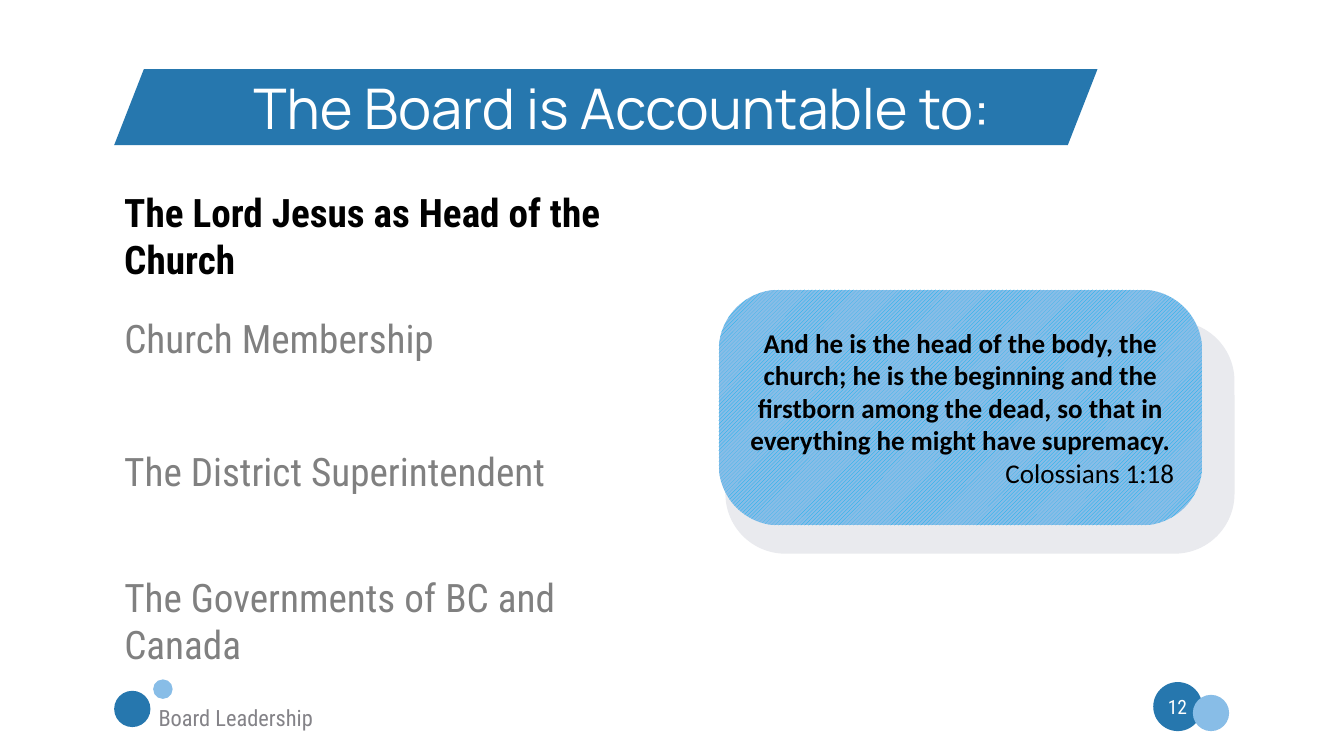
from pptx import Presentation
from pptx.dml.color import RGBColor
from pptx.enum.dml import MSO_PATTERN
from pptx.enum.shapes import MSO_SHAPE
from pptx.enum.text import MSO_ANCHOR, MSO_AUTO_SIZE, PP_ALIGN
from pptx.util import Inches, Pt

BLUE = RGBColor(0x26, 0x77, 0xAE)
LIGHT_BLUE = RGBColor(0x88, 0xBD, 0xE7)
SKY = RGBColor(0x00, 0xB0, 0xF0)
PALE_GRAY = RGBColor(0xE9, 0xEA, 0xEE)
GRAY = RGBColor(0x80, 0x80, 0x80)
FOOTER_GRAY = RGBColor(0x84, 0x83, 0x88)
BLACK = RGBColor(0, 0, 0)
WHITE = RGBColor(0xFF, 0xFF, 0xFF)

BODY_FONT = "Roboto Condensed"
TITLE_FONT = "Manrope"
QUOTE_FONT = "Calibri"


def add_plain_shape(slide, kind, left, top, width, height, color, adjustment=None):
    shape = slide.shapes.add_shape(
        kind, Inches(left), Inches(top), Inches(width), Inches(height))
    shape.shadow.inherit = False
    shape.fill.solid()
    shape.fill.fore_color.rgb = color
    shape.line.fill.background()
    if adjustment is not None:
        shape.adjustments[0] = adjustment
    return shape


def set_frame(frame, anchor=MSO_ANCHOR.TOP):
    frame.word_wrap = True
    frame.auto_size = MSO_AUTO_SIZE.NONE
    frame.vertical_anchor = anchor
    frame.margin_left = frame.margin_right = Inches(0.15)
    frame.margin_top = frame.margin_bottom = Inches(0.08)


def write(paragraph, text, font, size, color, bold=False, align=PP_ALIGN.LEFT):
    paragraph.text = text
    paragraph.alignment = align
    paragraph.font.name = font
    paragraph.font.size = Pt(size)
    paragraph.font.bold = bold
    paragraph.font.color.rgb = color


def add_label(slide, left, top, width, height, text, size, color,
              bold=False, align=PP_ALIGN.LEFT):
    label = slide.shapes.add_textbox(
        Inches(left), Inches(top), Inches(width), Inches(height))
    set_frame(label.text_frame)
    write(label.text_frame.paragraphs[0], text, BODY_FONT, size, color, bold, align)


def add_title(slide, left, top, width, height):
    banner = add_plain_shape(slide, MSO_SHAPE.PARALLELOGRAM,
                             left, top, width, height, BLUE, 0.391)
    title = slide.shapes.title
    banner.element.addnext(title.element)  # title sits in front of its banner
    title.left, title.top = Inches(left + 1.45), Inches(top)
    title.width, title.height = Inches(width - 2.9), Inches(height)
    set_frame(title.text_frame, MSO_ANCHOR.MIDDLE)
    write(title.text_frame.paragraphs[0], "The Board is Accountable to:",
          TITLE_FONT, 60, WHITE, align=PP_ALIGN.RIGHT)


def add_accountabilities(slide, left, top):
    # Offset from the top, width, height, wording
    parties = [
        (0, 9.1, 1.57, "The Lord Jesus as Head of the Church"),
        (1.88, 5.19, 0.86, "Church Membership"),
        (3.86, 6.97, 0.86, "The District Superintendent"),
        (5.73, 8.55, 1.57, "The Governments of BC and Canada"),
    ]
    for index, (offset, width, height, party) in enumerate(parties):
        current = index == 0
        add_label(slide, left, top + offset, width, height, party, 42,
                  BLACK if current else GRAY, bold=current)


def add_verse(slide, left, top, width, height):
    # Offset backing panel, then the patterned card
    add_plain_shape(slide, MSO_SHAPE.ROUNDED_RECTANGLE, left + 0.1, top + 0.47,
                    width + 0.38, height - 0.05, PALE_GRAY, 0.258)
    card = add_plain_shape(slide, MSO_SHAPE.ROUNDED_RECTANGLE,
                           left, top, width, height, LIGHT_BLUE, 0.258)
    card.fill.patterned()
    card.fill.pattern = MSO_PATTERN.WIDE_UPWARD_DIAGONAL
    card.fill.fore_color.rgb = SKY
    card.fill.back_color.rgb = LIGHT_BLUE
    frame = card.text_frame
    set_frame(frame, MSO_ANCHOR.MIDDLE)
    write(frame.paragraphs[0],
          "And he is the head of the body, the church; he is the beginning and "
          "the firstborn among the dead, so that in everything he might have "
          "supremacy.", QUOTE_FONT, 29, BLACK, True, PP_ALIGN.CENTER)
    write(frame.add_paragraph(), "Colossians 1:18", QUOTE_FONT, 29, BLACK,
          align=PP_ALIGN.RIGHT)


def add_footer(slide, left, top, width):
    # Circles: left, top, diameter, colour
    number_left = left + width - 1.13
    for x, y, diameter, color in [
        (left, top + 0.17, 0.54, BLUE),
        (left + 0.58, top, 0.29, LIGHT_BLUE),
        (number_left, top + 0.04, 0.73, BLUE),
        (number_left + 0.59, top + 0.23, 0.54, LIGHT_BLUE),
    ]:
        add_plain_shape(slide, MSO_SHAPE.OVAL, x, y, diameter, diameter, color)
    # Course name and slide number
    add_label(slide, left + 0.51, top + 0.29, 2.65, 0.56,
              "Board Leadership", 24, FOOTER_GRAY)
    add_label(slide, number_left, top + 0.15, 0.72, 0.6, "12", 21, WHITE,
              align=PP_ALIGN.CENTER)


def main():
    presentation = Presentation()
    presentation.slide_width = Inches(20.01)
    presentation.slide_height = Inches(11.25)
    slide = presentation.slides.add_slide(presentation.slide_layouts[5])
    add_footer(slide, 1.7, 10.11, 16.6)
    add_accountabilities(slide, 1.7, 2.72)
    add_verse(slide, 10.7, 4.31, 7.2, 3.51)
    add_title(slide, 1.7, 1.03, 14.64, 1.13)
    presentation.save("out.pptx")


if __name__ == "__main__":
    main()
